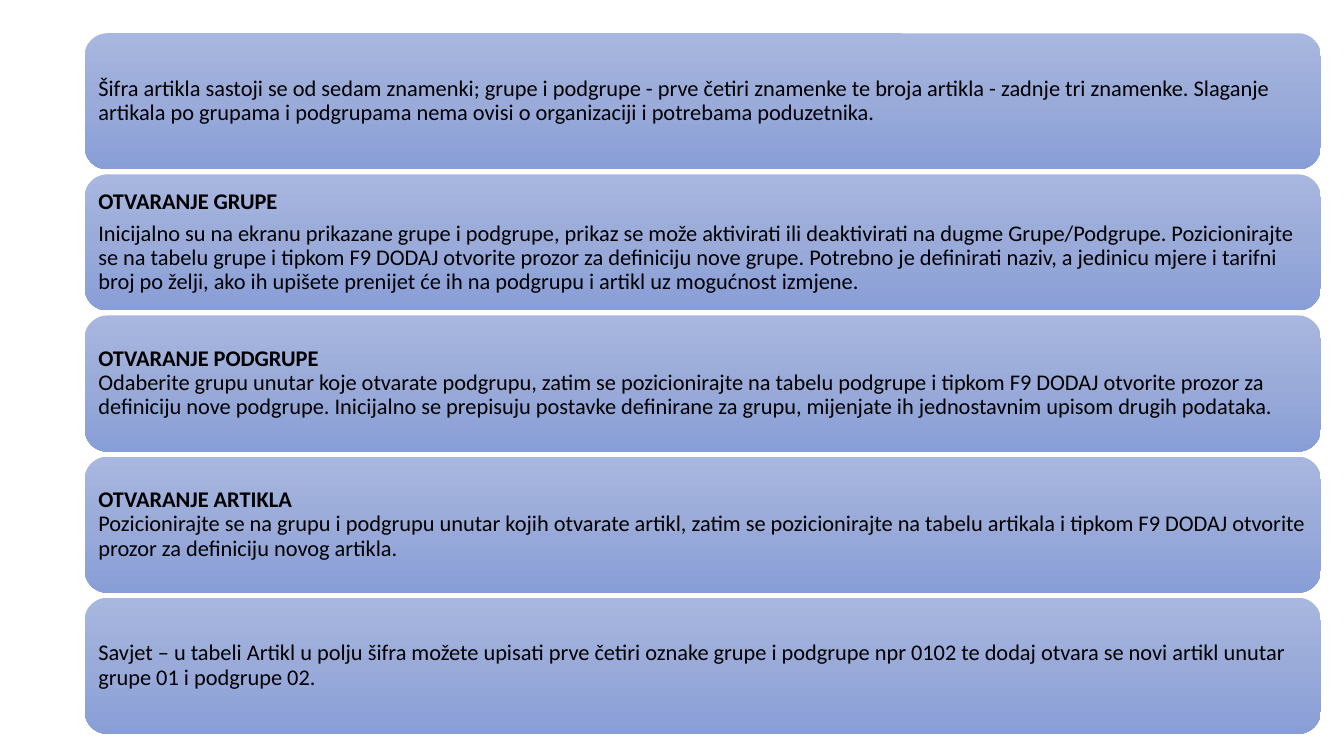
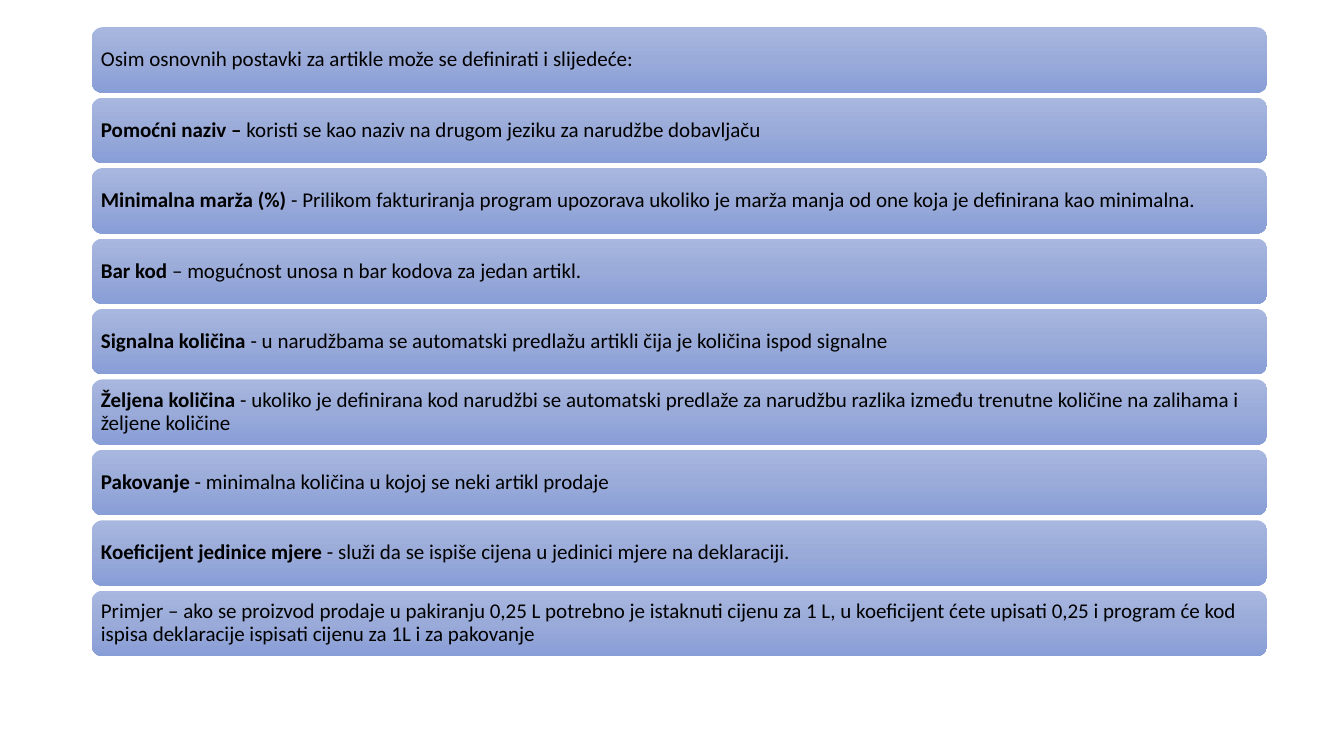
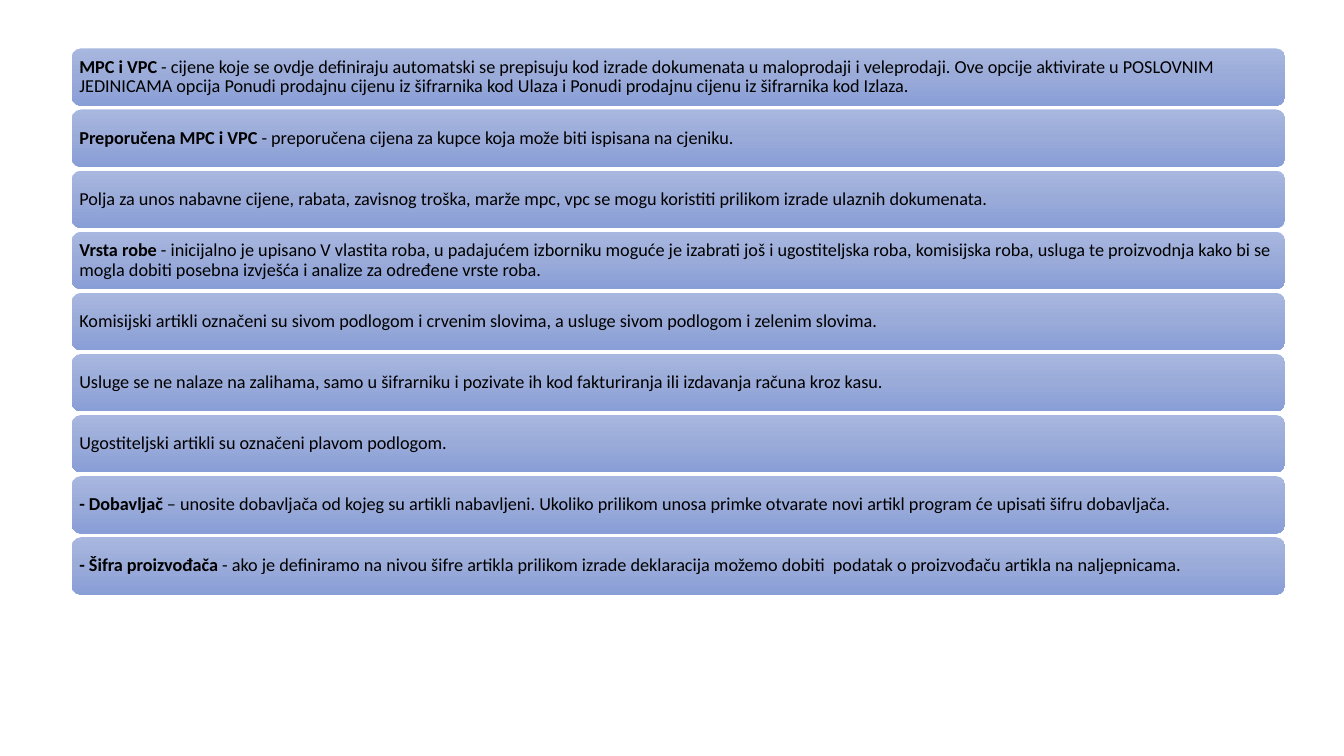
from copy import deepcopy
from dataclasses import dataclass
from enum import Enum

from pptx import Presentation
from pptx import util as u
from pptx.dml.color import RGBColor
from pptx.enum import shapes, text
from pptx.oxml.ns import qn

COLORS = {"top": "A8B7DF", "middle": "9AABD9", "bottom": "889ED7", "text": "000000"}
GRADIENT = (("top", 0), ("middle", 0.5), ("bottom", 1))
FONT = "Calibri"
LINE_SPACING = 0.9
PARAGRAPH_GAP = 0.35  # share of the font size


class Joint(Enum):
    """How the bold lead is joined to the body."""
    INLINE = 1
    BREAK = 2
    PARAGRAPH = 3


@dataclass(frozen=True)
class Bar:
    body: str
    lead: str = ""
    joint: Joint = Joint.INLINE


@dataclass(frozen=True)
class BarList:
    left: float
    first_top: float
    last_top: float
    width: float
    height: float
    inset: float
    size: int
    bars: tuple[Bar, ...]


# Slide contents
OPENING = BarList(0.84, 0.33, 5.93, 12.26, 1.35, 0.07, 16, (
    Bar("Šifra artikla sastoji se od sedam znamenki; grupe i podgrupe - prve četiri znamenke "
        "te broja artikla - zadnje tri znamenke. Slaganje artikala po grupama i podgrupama "
        "nema ovisi o organizaciji i potrebama poduzetnika."),
    Bar("Inicijalno su na ekranu prikazane grupe i podgrupe, prikaz se može aktivirati ili "
        "deaktivirati na dugme Grupe/Podgrupe. Pozicionirajte se na tabelu grupe i tipkom "
        "F9 DODAJ otvorite prozor za definiciju nove grupe. Potrebno je definirati naziv, a "
        "jedinicu mjere i tarifni broj po želji, ako ih upišete prenijet će ih na podgrupu i "
        "artikl uz mogućnost izmjene.", "OTVARANJE GRUPE", Joint.PARAGRAPH),
    Bar("Odaberite grupu unutar koje otvarate podgrupu, zatim se pozicionirajte na tabelu "
        "podgrupe i tipkom F9 DODAJ otvorite prozor za definiciju nove podgrupe. Inicijalno "
        "se prepisuju postavke definirane za grupu, mijenjate ih jednostavnim upisom drugih "
        "podataka.", "OTVARANJE PODGRUPE", Joint.BREAK),
    Bar("Pozicionirajte se na grupu i podgrupu unutar kojih otvarate artikl, zatim se "
        "pozicionirajte na tabelu artikala i tipkom F9 DODAJ otvorite prozor za definiciju "
        "novog artikla.", "OTVARANJE ARTIKLA", Joint.BREAK),
    Bar("Savjet – u tabeli Artikl u polju šifra možete upisati prve četiri oznake grupe i "
        "podgrupe npr 0102 te dodaj otvara se novi artikl unutar grupe 01 i podgrupe 02."),
))

SETTINGS = BarList(0.91, 0.27, 5.86, 11.66, 0.65, 0.06, 15, (
    Bar("Osim osnovnih postavki za artikle može se definirati i slijedeće:"),
    Bar("koristi se kao naziv na drugom jeziku za narudžbe dobavljaču", "Pomoćni naziv – "),
    Bar("- Prilikom fakturiranja program upozorava ukoliko je marža manja od one koja je "
        "definirana kao minimalna.", "Minimalna marža (%) "),
    Bar("– mogućnost unosa n bar kodova za jedan artikl.", "Bar kod "),
    Bar("- u narudžbama se automatski predlažu artikli čija je količina ispod signalne",
        "Signalna količina "),
    Bar("- ukoliko je definirana kod narudžbi se automatski predlaže za narudžbu razlika "
        "između trenutne količine na zalihama i željene količine", "Željena količina "),
    Bar(" - minimalna količina u kojoj se neki artikl prodaje", "Pakovanje"),
    Bar("- služi da se ispiše cijena u jedinici mjere na deklaraciji.",
        "Koeficijent jedinice mjere "),
    Bar("Primjer – ako se proizvod prodaje u pakiranju 0,25 L potrebno je istaknuti cijenu "
        "za 1 L, u koeficijent ćete upisati 0,25 i program će kod ispisa deklaracije "
        "ispisati cijenu za 1L i za pakovanje"),
))

PRICES = BarList(0.71, 0.48, 5.33, 12.04, 0.57, 0.05, 13, (
    Bar("- cijene koje se ovdje definiraju automatski se prepisuju kod izrade dokumenata u "
        "maloprodaji i veleprodaji. Ove opcije aktivirate u POSLOVNIM JEDINICAMA opcija "
        "Ponudi prodajnu cijenu iz šifrarnika kod Ulaza i Ponudi prodajnu cijenu iz "
        "šifrarnika kod Izlaza.", "MPC i VPC "),
    Bar("- preporučena cijena za kupce koja može biti ispisana na cjeniku.",
        "Preporučena MPC i VPC "),
    Bar("Polja za unos nabavne cijene, rabata, zavisnog troška, marže mpc, vpc se mogu "
        "koristiti prilikom izrade ulaznih dokumenata."),
    Bar("- inicijalno je upisano V vlastita roba, u padajućem izborniku moguće je izabrati "
        "još i ugostiteljska roba, komisijska roba, usluga te proizvodnja kako bi se mogla "
        "dobiti posebna izvješća i analize za određene vrste roba.", "Vrsta robe "),
    Bar("Komisijski artikli označeni su sivom podlogom i crvenim slovima, a usluge sivom "
        "podlogom i zelenim slovima."),
    Bar("Usluge se ne nalaze na zalihama, samo u šifrarniku i pozivate ih kod fakturiranja "
        "ili izdavanja računa kroz kasu."),
    Bar("Ugostiteljski artikli su označeni plavom podlogom."),
    Bar(" – unosite dobavljača od kojeg su artikli nabavljeni. Ukoliko prilikom unosa primke "
        "otvarate novi artikl program će upisati šifru dobavljača.", "- Dobavljač"),
    Bar("- ako je definiramo na nivou šifre artikla prilikom izrade deklaracija možemo "
        "dobiti  podatak o proizvođaču artikla na naljepnicama.", "- Šifra proizvođača "),
))


def apply(target, values: dict) -> None:
    for name, value in values.items():
        setattr(target, name, value)


def fill_gradient(shape) -> None:
    shape.fill.gradient()
    shape.fill.gradient_angle = 270
    stop_list = shape._element.spPr.find(".//" + qn("a:gsLst"))
    stop_list.insert(1, deepcopy(stop_list[0]))
    for stop, (color, position) in zip(shape.fill.gradient_stops, GRADIENT):
        stop.color.rgb = RGBColor.from_string(COLORS[color])
        stop.position = position


def add_run(paragraph, content: str, size: int, bold: bool):
    run = paragraph.add_run()
    run.text = content
    apply(run.font, {"name": FONT, "size": u.Pt(size), "bold": bold})
    run.font.color.rgb = RGBColor.from_string(COLORS["text"])
    return run


def format_paragraph(paragraph) -> None:
    apply(paragraph, {"alignment": text.PP_ALIGN.LEFT, "line_spacing": LINE_SPACING})


def write_bar(frame, bar: Bar, size: int) -> None:
    paragraph = frame.paragraphs[0]
    format_paragraph(paragraph)
    if bar.lead:
        lead = add_run(paragraph, bar.lead, size, True)
        if bar.joint is Joint.BREAK:
            paragraph.add_line_break()
            paragraph._p[-1].append(deepcopy(lead._r.rPr))  # the break keeps the lead's size
        elif bar.joint is Joint.PARAGRAPH:
            paragraph.space_after = u.Pt(size * PARAGRAPH_GAP)
            paragraph = frame.add_paragraph()
            format_paragraph(paragraph)
    add_run(paragraph, bar.body, size, False)


def draw_bars(slide, layout: BarList) -> None:
    pitch = (layout.last_top - layout.first_top) / (len(layout.bars) - 1)
    margins = {f"margin_{side}": u.Inches(layout.inset)
               for side in ("left", "top", "right", "bottom")}
    for index, bar in enumerate(layout.bars):
        shape = slide.shapes.add_shape(
            shapes.MSO_SHAPE.ROUNDED_RECTANGLE,
            u.Inches(layout.left), u.Inches(layout.first_top + index * pitch),
            u.Inches(layout.width), u.Inches(layout.height))
        shape.shadow.inherit = False
        shape.line.fill.background()
        fill_gradient(shape)
        apply(shape.text_frame, {"word_wrap": True,
                                 "vertical_anchor": text.MSO_ANCHOR.MIDDLE, **margins})
        write_bar(shape.text_frame, bar, layout.size)


def main() -> None:
    presentation = Presentation()
    apply(presentation, {"slide_width": u.Inches(13.33), "slide_height": u.Inches(7.5)})
    for layout in (OPENING, SETTINGS, PRICES):
        draw_bars(presentation.slides.add_slide(presentation.slide_layouts[6]), layout)
    presentation.save("out.pptx")


if __name__ == "__main__":
    main()
